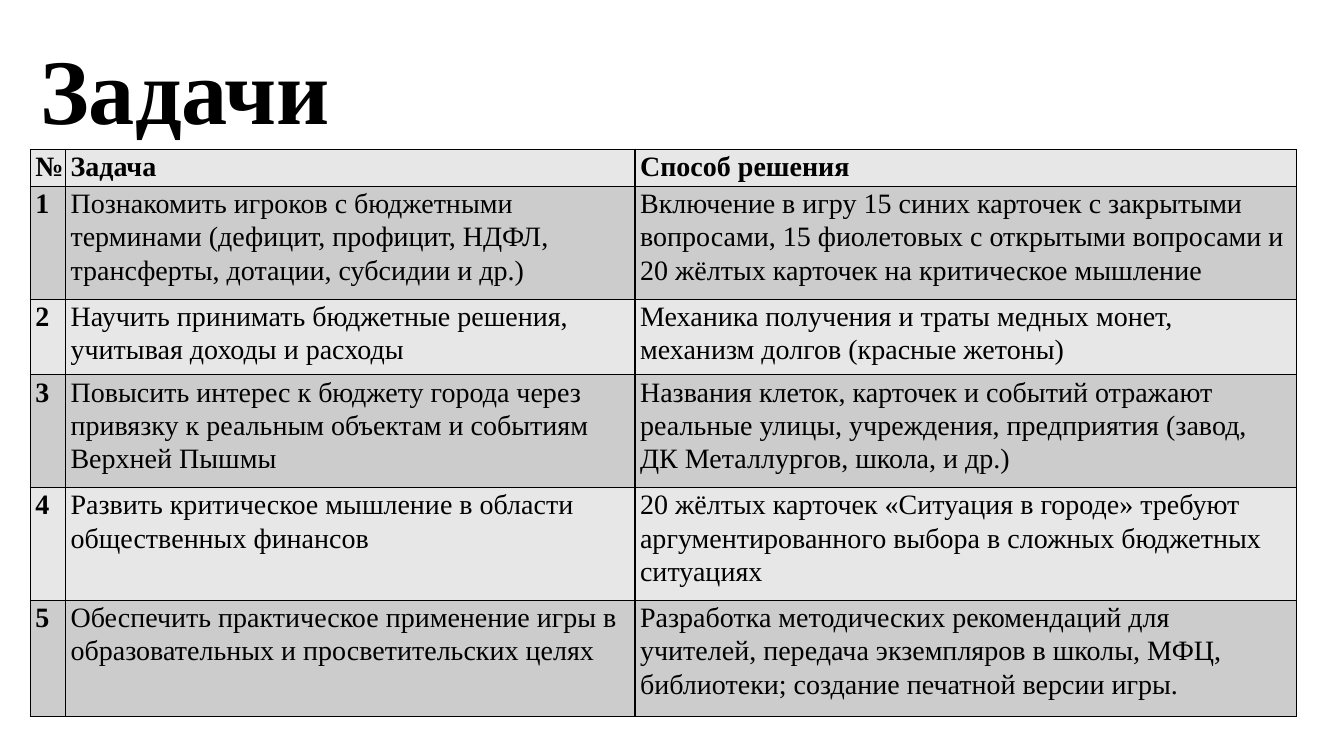
from lxml.etree import SubElement as Sub
from pptx import Presentation
from pptx.dml.color import RGBColor
from pptx.enum.text import MSO_AUTO_SIZE as Auto
from pptx.oxml.ns import qn
from pptx.util import Pt

BLACK = RGBColor(0, 0, 0)
LIGHT = RGBColor(0xE7, 0xE7, 0xE7)
GREY = RGBColor(0xCC, 0xCC, 0xCC)

COLS = [25.2, 406.8, 472.3]
HIGHS = [26.6, 80.6, 54, 80.6, 80.6, 82.6]
ROWS = [
    ("№", "Задача", "Способ решения"),
    ("1", "Познакомить игроков с бюджетными терминами (дефицит, профицит, НДФЛ, "
          "трансферты, дотации, субсидии и др.)",
     "Включение в игру 15 синих карточек с закрытыми вопросами, 15 фиолетовых "
     "с открытыми вопросами и 20 жёлтых карточек на критическое мышление"),
    ("2", "Научить принимать бюджетные решения, учитывая доходы и расходы",
     "Механика получения и траты медных монет, механизм долгов (красные жетоны)"),
    ("3", "Повысить интерес к бюджету города через привязку к реальным объектам "
          "и событиям Верхней Пышмы",
     "Названия клеток, карточек и событий отражают реальные улицы, учреждения, "
     "предприятия (завод, ДК Металлургов, школа, и др.)"),
    ("4", "Развить критическое мышление в области общественных финансов",
     "20 жёлтых карточек «Ситуация в городе» требуют аргументированного выбора "
     "в сложных бюджетных ситуациях"),
    ("5", "Обеспечить практическое применение игры в образовательных "
          "и просветительских целях",
     "Разработка методических рекомендаций для учителей, передача экземпляров "
     "в школы, МФЦ, библиотеки; создание печатной версии игры."),
]


class Deck:
    face = "Times New Roman"
    ink = BLACK

    def __init__(self, wide, high):
        self.prs = Presentation()
        self.prs.slide_width, self.prs.slide_height = Pt(wide), Pt(high)
        self.slide = self.prs.slides.add_slide(self.prs.slide_layouts[6])

    def style(self, para, size, bold):
        font = para.font
        font.name, font.size, font.bold = self.face, Pt(size), bold
        font.color.rgb = self.ink

    def title(self, text, x, y, w, h, size):
        frame = self.slide.shapes.add_textbox(Pt(x), Pt(y), Pt(w), Pt(h)).text_frame
        frame.word_wrap = False
        frame.auto_size = Auto.SHAPE_TO_FIT_TEXT
        para = frame.paragraphs[0]
        para.text = text
        self.style(para, size, True)

    def border(self, cell):
        props = cell._tc.get_or_add_tcPr()
        for spot, side in enumerate(("lnL", "lnR", "lnT", "lnB")):
            line = props.makeelement(qn("a:" + side), {"w": str(Pt(1))})
            fill = Sub(line, qn("a:solidFill"))
            Sub(fill, qn("a:srgbClr"), val=str(self.ink))
            props.insert(spot, line)

    def cell(self, cell, text, size, bold, fill):
        cell.margin_left = cell.margin_right = Pt(3.6)
        cell.margin_top = cell.margin_bottom = 0
        cell.fill.solid()
        cell.fill.fore_color.rgb = fill
        para = cell.text_frame.paragraphs[0]
        para.text = text
        para.line_spacing = 1.07
        para.space_after = Pt(8)
        self.style(para, size, bold)
        self.border(cell)

    def table(self, rows, cols, highs, x, y, size):
        grid = self.slide.shapes.add_table(
            len(rows), len(cols), Pt(x), Pt(y), Pt(sum(cols)), Pt(sum(highs))).table
        for col, wide in zip(grid.columns, cols):
            col.width = Pt(wide)
        for row, high in zip(grid.rows, highs):
            row.height = Pt(high)
        for r, row in enumerate(rows):
            for c, text in enumerate(row):
                self.cell(grid.cell(r, c), text, size, r == 0 or c == 0,
                          GREY if r % 2 else LIGHT)


def main():
    deck = Deck(960, 540)
    deck.table(ROWS, COLS, HIGHS, 21.6, 106.6, 20)
    deck.title("Задачи", 21.6, 19.4, 223.2, 87.1, 66)
    deck.prs.save("out.pptx")


if __name__ == "__main__":
    main()
